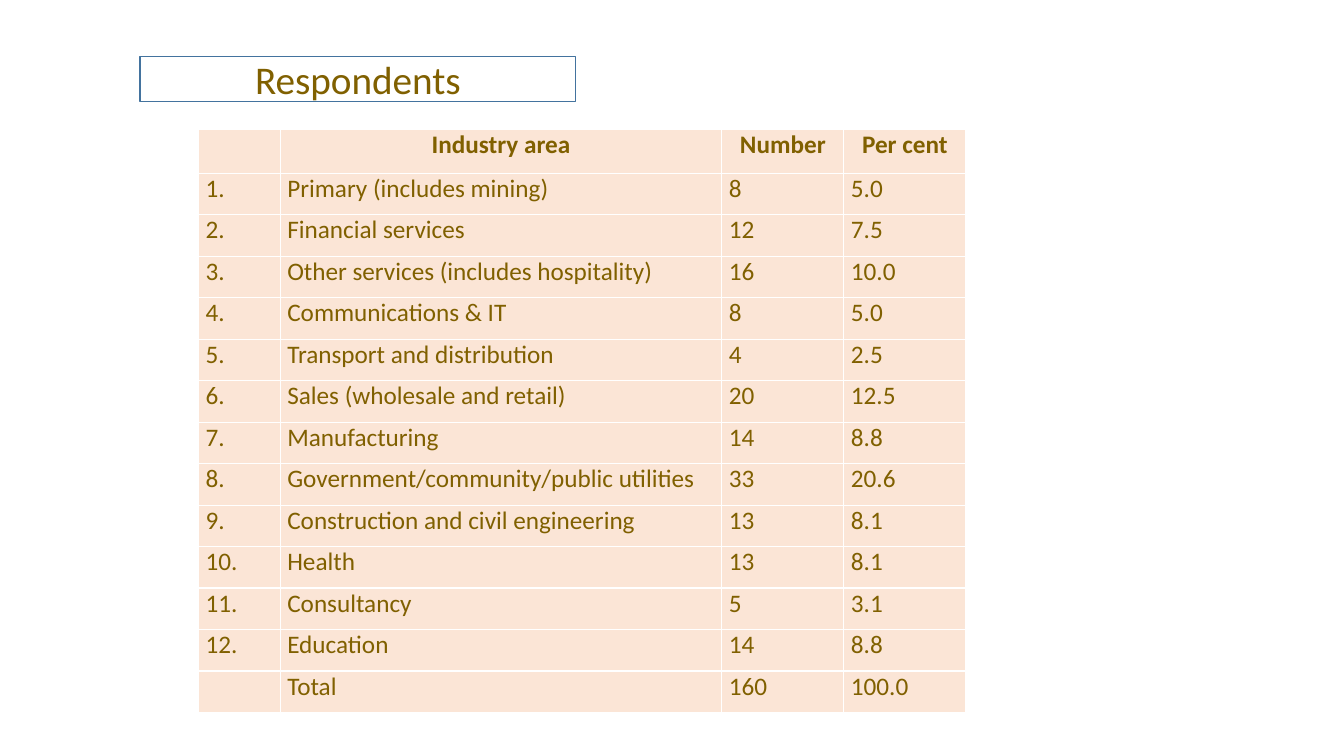
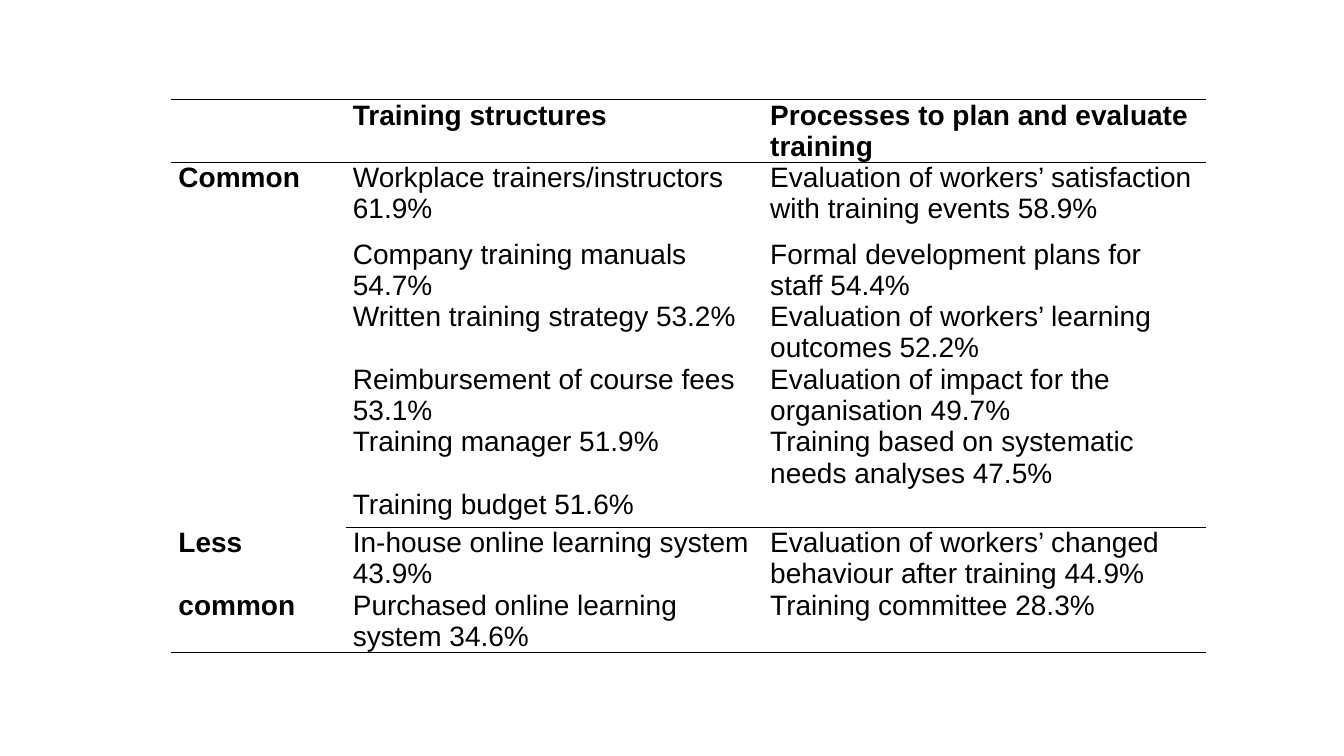
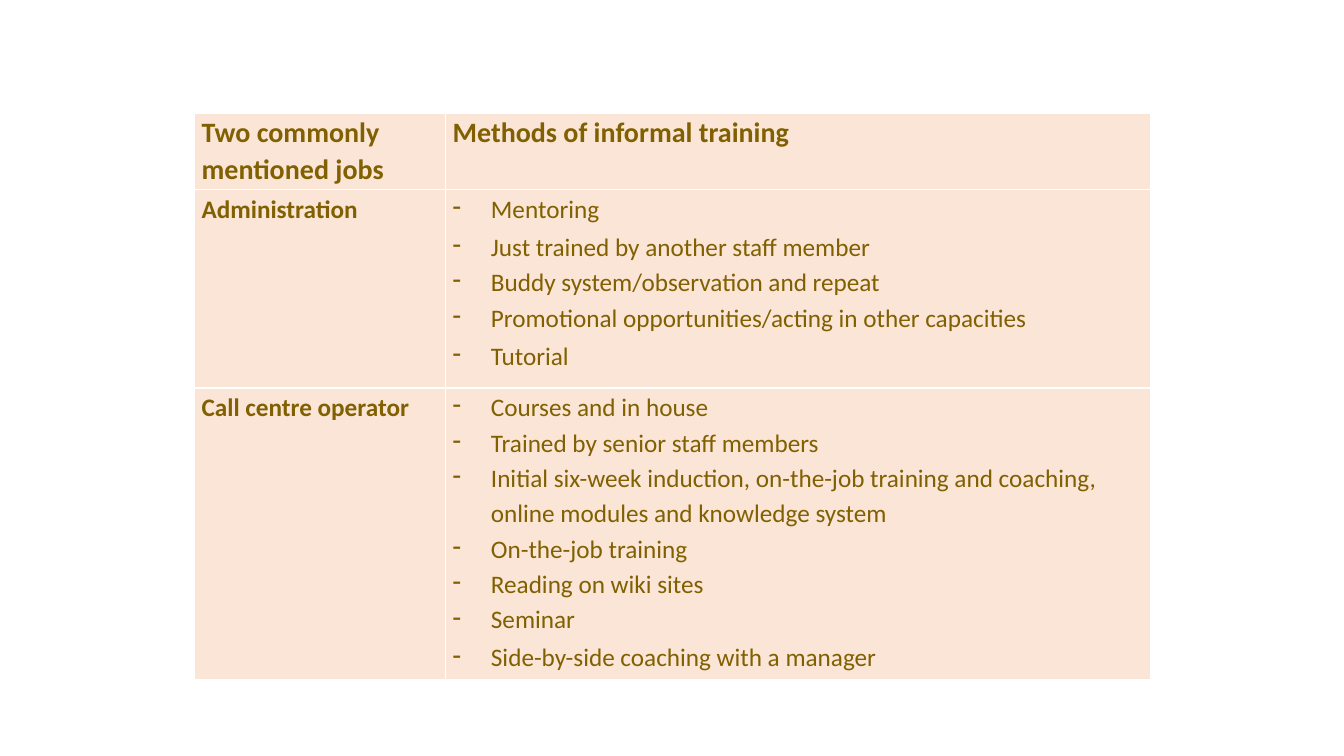
from lxml import etree
from pptx import Presentation
from pptx.dml.color import RGBColor
from pptx.enum.text import MSO_ANCHOR, MSO_AUTO_SIZE, PP_ALIGN
from pptx.oxml.ns import qn
from pptx.util import Inches, Pt

CENTER = PP_ALIGN.CENTER
MIDDLE = MSO_ANCHOR.MIDDLE
NO_AUTOFIT = MSO_AUTO_SIZE.NONE
TITLE_ONLY, BLANK = 5, 6

BROWN = RGBColor(0x80, 0x60, 0x00)
PEACH = RGBColor(0xFB, 0xE5, 0xD6)
BLUE = RGBColor(0x43, 0x73, 0x9E)
WHITE = RGBColor(0xFF, 0xFF, 0xFF)
BLACK = RGBColor(0x00, 0x00, 0x00)

CALIBRI, ARIAL = "Calibri", "Arial"
SIDES = ("L", "R", "T", "B")

INDUSTRIES = [
    ("Primary (includes mining)", "8", "5.0"),
    ("Financial services", "12", "7.5"),
    ("Other services (includes hospitality)", "16", "10.0"),
    ("Communications & IT", "8", "5.0"),
    ("Transport and distribution", "4", "2.5"),
    ("Sales (wholesale and retail)", "20", "12.5"),
    ("Manufacturing", "14", "8.8"),
    ("Government/community/public utilities", "33", "20.6"),
    ("Construction and civil engineering", "13", "8.1"),
    ("Health", "13", "8.1"),
    ("Consultancy", "5", "3.1"),
    ("Education", "14", "8.8"),
]

TRAINING = [
    ("", "Training structures", "Processes to plan and evaluate training"),
    ("Common", "Workplace trainers/instructors 61.9%",
     "Evaluation of workers’ satisfaction with training events 58.9%"),
    ("", "Company training manuals 54.7%", "Formal development plans for staff 54.4%"),
    ("", "Written training strategy 53.2%",
     "Evaluation of workers’ learning outcomes 52.2%"),
    ("", "Reimbursement of course fees 53.1%",
     "Evaluation of impact for the organisation 49.7%"),
    ("", "Training manager 51.9%", "Training based on systematic needs analyses 47.5%"),
    ("", "Training budget 51.6%", ""),
    ("Less", "In-house online learning system 43.9%",
     "Evaluation of workers’ changed behaviour after training 44.9%"),
    ("common", "Purchased online learning system 34.6%", "Training committee 28.3%"),
]

ADMINISTRATION = [
    "Mentoring",
    "Just trained by another staff member",
    "Buddy system/observation and repeat",
    "Promotional opportunities/acting in other capacities",
    "Tutorial",
]

CALL_CENTRE = [
    "Courses and in house",
    "Trained by senior staff members",
    "Initial six-week induction, on-the-job training and coaching, "
    "online modules and knowledge system",
    "On-the-job training",
    "Reading on wiki sites",
    "Seminar",
    "Side-by-side coaching with a manager",
]


def add_text(para, text, font, size, color, bold=False):
    span = para.add_run()
    span.text = text
    span.font.name = font
    span.font.size = Pt(size)
    span.font.bold = bold
    span.font.color.rgb = color


def space(para, before, after, line=None):
    para.space_before = Pt(before)
    para.space_after = Pt(after)
    if line:
        para.line_spacing = line


def add_dash(para, indent):
    """Give the paragraph a hanging dash bullet."""
    props = para._p.get_or_add_pPr()
    props.set("marL", str(indent))
    props.set("indent", str(-indent))
    etree.SubElement(props, qn("a:buChar"), char="-")


def set_borders(cell, colors):
    """Draw 1 pt borders; sides missing from colors get no line."""
    props = cell._tc.get_or_add_tcPr()
    for side in SIDES:
        line = etree.SubElement(props, qn(f"a:ln{side}"), w=str(Pt(1)))
        if side in colors:
            fill = etree.SubElement(line, qn("a:solidFill"))
            etree.SubElement(fill, qn("a:srgbClr"), val=str(colors[side]))
        else:
            etree.SubElement(line, qn("a:noFill"))


def add_grid(page, left, top, widths, heights):
    """Add an unstyled table with narrow cell margins."""
    frame = page.shapes.add_table(
        len(heights), len(widths), Inches(left), Inches(top),
        Inches(sum(widths)), Inches(sum(heights)))
    table = frame.table
    table.first_row = table.horz_banding = False
    for column, width in zip(table.columns, widths):
        column.width = Inches(width)
    for row, height in zip(table.rows, heights):
        row.height = Inches(height)
    for cell in table.iter_cells():
        cell.margin_left = cell.margin_right = Inches(0.07)
        cell.margin_top = cell.margin_bottom = 0
    return table


def paint_peach(table):
    for cell in table.iter_cells():
        set_borders(cell, dict.fromkeys(SIDES, WHITE))
        cell.fill.solid()
        cell.fill.fore_color.rgb = PEACH


def rule_lines(table, rules):
    """Rule black lines; rules maps a row boundary to its first column."""
    for r, row in enumerate(table.rows):
        for c, cell in enumerate(row.cells):
            edges = {"T": r, "B": r + 1}
            set_borders(cell, {side: BLACK for side, edge in edges.items()
                               if edge in rules and c >= rules[edge]})
            cell.fill.background()


def add_title(page, text):
    title = page.shapes.title
    title.left, title.top = Inches(1.39), Inches(0.56)
    title.width, title.height = Inches(4.32), Inches(0.45)
    title.line.color.rgb = BLUE
    title.line.width = Pt(1)
    frame = title.text_frame
    frame.auto_size = NO_AUTOFIT
    frame.vertical_anchor = MIDDLE
    para = frame.paragraphs[0]
    para.alignment = CENTER
    add_text(para, text, CALIBRI, 28, BROWN)


def build_respondents(deck):
    page = deck.slides.add_slide(deck.slide_layouts[TITLE_ONLY])
    add_title(page, "Respondents")
    rows = [("", "Industry area", "Number", "Per cent")]
    rows += [(f"{n}.", *entry) for n, entry in enumerate(INDUSTRIES, 1)]
    rows.append(("", "Total", "160", "100.0"))
    header_height, total_height = 0.44, 5.79
    body_count = len(rows) - 1
    body_height = (total_height - header_height) / body_count
    table = add_grid(page, 1.97, 1.28, [0.81, 4.38, 1.21, 1.21],
                     [header_height] + [body_height] * body_count)
    paint_peach(table)
    for r, row in enumerate(rows):
        header = r == 0
        for c, text in enumerate(row):
            if not text:
                continue
            para = table.cell(r, c).text_frame.paragraphs[0]
            gap = 4 if header else 2
            space(para, gap, gap)
            if header:
                para.alignment = CENTER
            add_text(para, text, CALIBRI, 18, BROWN, header)


def build_training(deck):
    page = deck.slides.add_slide(deck.slide_layouts[BLANK])
    heights = [0.61, 0.76] + [0.62] * 4 + [0.38] + [0.62] * 2
    table = add_grid(page, 1.7, 0.99, [1.73, 4.14, 4.39], heights)
    rule_lines(table, {0: 0, 1: 0, 7: 1, len(TRAINING): 0})
    for r, row in enumerate(TRAINING):
        for c, text in enumerate(row):
            if not text:
                continue
            para = table.cell(r, c).text_frame.paragraphs[0]
            space(para, 4 if r == 0 else 2, 4 if r == 0 or c == 2 else 2)
            add_text(para, text, ARIAL, 20, BLACK, r == 0 or c == 0)


def fill_methods(cell, methods, first_gaps):
    frame = cell.text_frame
    last = len(methods) - 1
    for i, method in enumerate(methods):
        para = frame.add_paragraph() if i else frame.paragraphs[0]
        gaps = first_gaps if i == 0 else (2, 4) if i == last else (0, 0)
        space(para, *gaps, 1.15)
        add_dash(para, Inches(0.38))
        add_text(para, method, CALIBRI, 18, BROWN)


def build_informal_training(deck):
    page = deck.slides.add_slide(deck.slide_layouts[BLANK])
    table = add_grid(page, 1.93, 1.13, [2.49, 6.99], [0.75, 1.97, 2.89])
    paint_peach(table)
    headings = [
        (0, 0, "Two commonly mentioned jobs", 20, (4, 4, 1.07)),
        (0, 1, "Methods of informal training", 20, (4, 4, 1.07)),
        (1, 0, "Administration", 18, (4, 2, 1.15)),
        (2, 0, "Call centre operator", 18, (2, 2, 1.15)),
    ]
    for r, c, text, size, spacing in headings:
        para = table.cell(r, c).text_frame.paragraphs[0]
        space(para, *spacing)
        add_text(para, text, CALIBRI, size, BROWN, True)
    fill_methods(table.cell(1, 1), ADMINISTRATION, (4, 2))
    fill_methods(table.cell(2, 1), CALL_CENTRE, (0, 0))


def main():
    deck = Presentation()
    deck.slide_width, deck.slide_height = Inches(13.33), Inches(7.5)
    build_respondents(deck)
    build_training(deck)
    build_informal_training(deck)
    deck.save("out.pptx")


if __name__ == "__main__":
    main()
